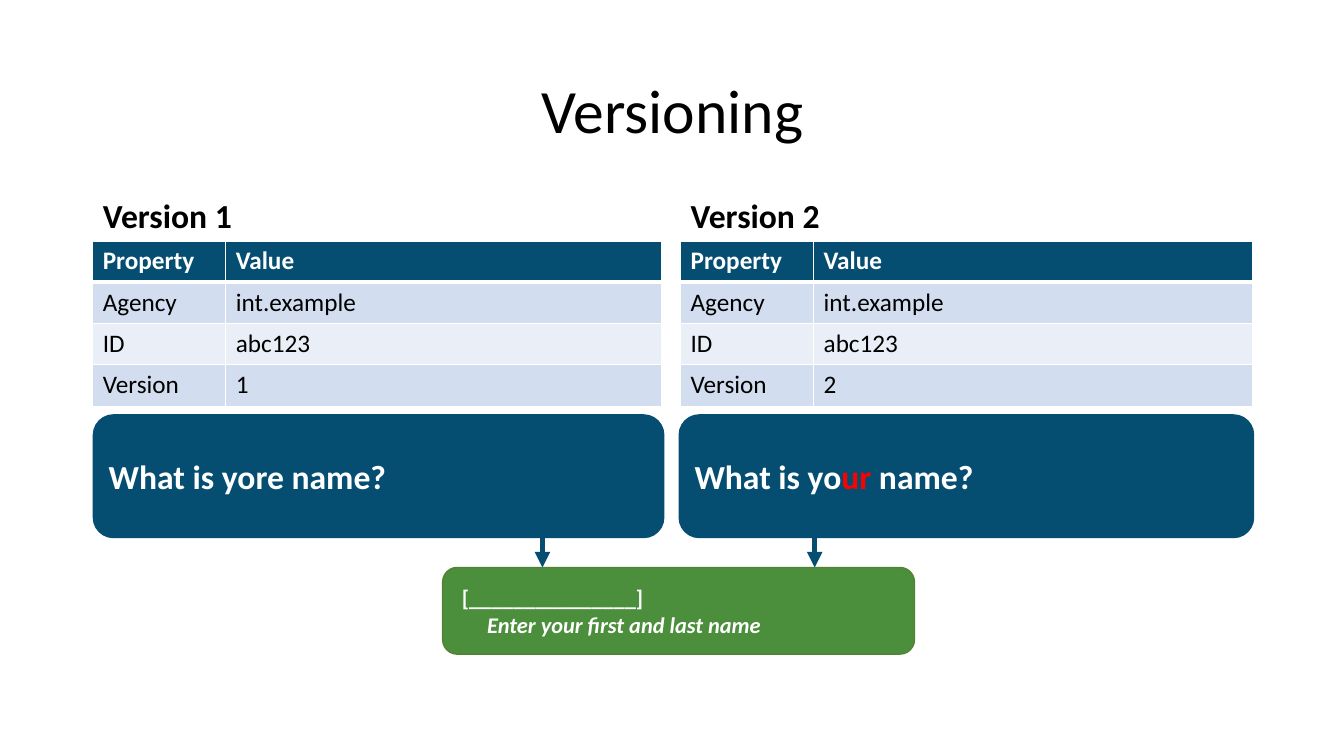
from dataclasses import dataclass

from lxml import etree
from pptx import Presentation
from pptx import util as u
from pptx.dml.color import RGBColor
from pptx.enum import shapes, text
from pptx.oxml.ns import qn


# Colours and type sizes
@dataclass(frozen=True)
class Theme:
    font: str = "Calibri"
    navy: str = "054E72"
    green: str = "4B8E3C"
    edge: str = "548235"
    red: str = "FF0000"
    white: str = "FFFFFF"
    black: str = "000000"
    bands: tuple[str, str] = ("D2DEEF", "EAEFF7")
    title: int = 44
    head: int = 24
    cell: int = 18
    note: int = 16


@dataclass(frozen=True)
class Box:
    left: float
    top: float
    width: float
    height: float

    def place(self) -> list:
        return [u.Inches(n) for n in (self.left, self.top, self.width, self.height)]


@dataclass(frozen=True)
class Version:
    number: str
    slot: int
    left: float
    width: float
    card: Box
    arrow: float
    ask: tuple[tuple[str, str], ...]


THEME = Theme()
LABEL = 1.32
ROW = 0.41
VERSIONS = (
    Version("1", 1, 0.92, 5.64, Box(0.92, 4.11, 5.67, 1.23), 5.38,
            (("What is yore name?", THEME.white),)),
    Version("2", 3, 6.75, 5.67, Box(6.73, 4.11, 5.71, 1.23), 8.08,
            (("What is yo", THEME.white), ("ur", THEME.red), (" name?", THEME.white))),
)
ANSWER = Box(4.39, 5.63, 4.68, 0.86)


def write(para, words: str, *, size: int, color: str = THEME.black,
          bold: bool = False, italic: bool = False) -> None:
    run = para.add_run()
    run.text = words
    font = run.font
    font.name, font.size = THEME.font, u.Pt(size)
    font.bold, font.italic = bold, italic
    font.color.rgb = RGBColor.from_string(color)


def fill_slot(holder, box: Box, words: str, *, size: int, bold: bool,
              align, anchor) -> None:
    holder.left, holder.top, holder.width, holder.height = box.place()
    frame = holder.text_frame
    frame.auto_size = text.MSO_AUTO_SIZE.NONE
    frame.vertical_anchor = anchor
    para = frame.paragraphs[0]
    para.alignment, para.line_spacing = align, 0.9
    para.space_before = u.Pt(0)
    write(para, words, size=size, bold=bold)


def add_card(slide, box: Box, color: str, edge: str | None = None):
    card = slide.shapes.add_shape(shapes.MSO_SHAPE.ROUNDED_RECTANGLE, *box.place())
    card.shadow.inherit = False
    card.fill.solid()
    card.fill.fore_color.rgb = RGBColor.from_string(color)
    if edge:
        card.line.color.rgb = RGBColor.from_string(edge)
        card.line.width = u.Pt(1)
    else:
        card.line.fill.background()
    frame = card.text_frame
    frame.word_wrap = True
    frame.vertical_anchor = text.MSO_ANCHOR.MIDDLE
    frame.paragraphs[0].alignment = text.PP_ALIGN.LEFT
    return frame


def add_arrow(slide, x: float, top: float, end: float) -> None:
    arrow = slide.shapes.add_connector(
        shapes.MSO_CONNECTOR.STRAIGHT,
        u.Inches(x), u.Inches(top), u.Inches(x), u.Inches(end))
    arrow.line.color.rgb = RGBColor.from_string(THEME.navy)
    arrow.line.width = u.Pt(3.75)
    stroke = arrow._element.spPr.find(qn("a:ln"))
    etree.SubElement(stroke, qn("a:tailEnd"), type="triangle")
    etree.SubElement(arrow._element.spPr, qn("a:effectLst"))


def add_edges(cell, row: int) -> None:
    props = cell._tc.get_or_add_tcPr()
    widths = {"L": 1, "R": 1, "T": 3 if row == 1 else 1, "B": 3 if row == 0 else 1}
    for side, width in widths.items():
        line = etree.SubElement(props, qn(f"a:ln{side}"), w=str(int(u.Pt(width))))
        solid = etree.SubElement(line, qn("a:solidFill"))
        etree.SubElement(solid, qn("a:srgbClr"), val=THEME.white)


def add_grid(slide, item: Version) -> None:
    rows = (("Property", "Value"), ("Agency", "int.example"),
            ("ID", "abc123"), ("Version", item.number))
    box = Box(item.left, 2.39, item.width, ROW * len(rows))
    grid = slide.shapes.add_table(len(rows), 2, *box.place()).table
    grid.horz_banding = False
    for col, width in zip(grid.columns, (LABEL, item.width - LABEL)):
        col.width = u.Inches(width)
    for r, row in enumerate(rows):
        grid.rows[r].height = u.Inches(ROW)
        top = r == 0
        for c, words in enumerate(row):
            cell = grid.cell(r, c)
            add_edges(cell, r)
            cell.fill.solid()
            shade = THEME.navy if top else THEME.bands[(r - 1) % 2]
            cell.fill.fore_color.rgb = RGBColor.from_string(shade)
            write(cell.text_frame.paragraphs[0], words, size=THEME.cell, bold=top,
                  color=THEME.white if top else THEME.black)


def main() -> None:
    deck = Presentation()
    deck.slide_width, deck.slide_height = u.Inches(13.33), u.Inches(7.5)
    slide = deck.slides.add_slide(deck.slide_layouts.get_by_name("Comparison"))
    slots = {s.placeholder_format.idx: s for s in slide.placeholders}

    # Title
    fill_slot(slots[0], Box(0.92, 0.4, 11.5, 1.45), "Versioning", size=THEME.title,
              bold=False, align=text.PP_ALIGN.CENTER, anchor=text.MSO_ANCHOR.MIDDLE)

    # Arrows start behind the cards
    for item in VERSIONS:
        add_arrow(slide, item.arrow, 4.82, ANSWER.top)

    # One column per version: heading, table, question
    for item in VERSIONS:
        fill_slot(slots[item.slot], Box(item.left, 1.49, item.width, 0.9),
                  f"Version {item.number}", size=THEME.head, bold=True,
                  align=text.PP_ALIGN.LEFT, anchor=text.MSO_ANCHOR.BOTTOM)
        add_grid(slide, item)
        para = add_card(slide, item.card, THEME.navy).paragraphs[0]
        for words, color in item.ask:
            write(para, words, size=THEME.head, color=color, bold=True)

    # Shared answer field
    frame = add_card(slide, ANSWER, THEME.green, THEME.edge)
    lines = (("[_______________]", 0.05, False),
             ("Enter your first and last name", 0.3, True))
    for n, (words, indent, italic) in enumerate(lines):
        para = frame.add_paragraph() if n else frame.paragraphs[0]
        para.alignment = text.PP_ALIGN.LEFT
        para._p.get_or_add_pPr().set("marL", str(int(u.Inches(indent))))
        write(para, words, size=THEME.note, color=THEME.white, bold=True, italic=italic)

    # Unused content slots
    for n in (2, 4):
        slot = slots[n]._element
        slot.getparent().remove(slot)

    deck.save("out.pptx")


if __name__ == "__main__":
    main()
